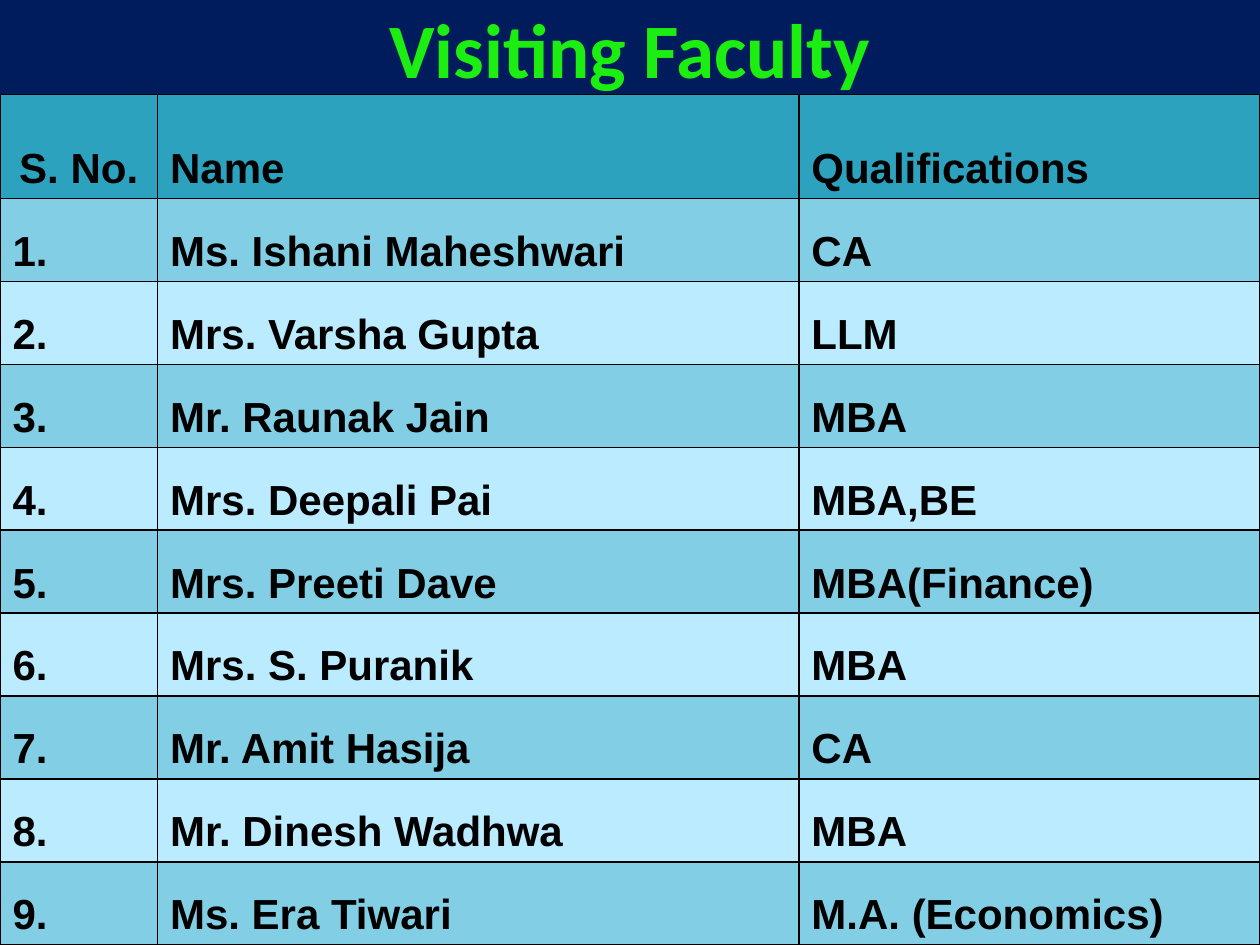
from lxml import etree
from pptx import Presentation
from pptx.dml.color import RGBColor
from pptx.enum.text import MSO_ANCHOR, PP_ALIGN
from pptx.oxml.ns import qn
from pptx.util import Pt

LEFT, CENTER = PP_ALIGN.LEFT, PP_ALIGN.CENTER
MIDDLE, BOTTOM = MSO_ANCHOR.MIDDLE, MSO_ANCHOR.BOTTOM

# Content
TITLE = "Visiting Faculty"
HEADINGS = ("S. No.", "Name", "Qualifications")
FACULTY = [
    ("Ms. Ishani Maheshwari", "CA"),
    ("Mrs. Varsha Gupta", "LLM"),
    ("Mr. Raunak Jain", "MBA"),
    ("Mrs. Deepali Pai", "MBA,BE"),
    ("Mrs. Preeti Dave", "MBA(Finance)"),
    ("Mrs. S. Puranik", "MBA"),
    ("Mr. Amit Hasija", "CA"),
    ("Mr. Dinesh Wadhwa", "MBA"),
    ("Ms. Era Tiwari", "M.A. (Economics)"),
]

# Layout and colours
WIDTH, HEIGHT, TITLE_HEIGHT = 720, 540, 54
COLUMN_WIDTHS = (90, 366.5, 263.5)
HEADING_HEIGHT = 59.4
NAVY, GREEN, BLACK = "001C5D", "1CEE12", "000000"
HEADING_FILL, ODD_FILL, EVEN_FILL = "2DA2BF", "82CEE5", "BBEBFF"


def paint(fill, color):
    fill.solid()
    fill.fore_color.rgb = RGBColor.from_string(color)


def write(frame, text, size=24, font="Arial", color=BLACK, align=LEFT):
    frame.text = text
    paragraph = frame.paragraphs[0]
    paragraph.alignment = align
    style = paragraph.runs[0].font
    style.size, style.name, style.bold = Pt(size), font, True
    style.color.rgb = RGBColor.from_string(color)


def add_borders(cell, color=BLACK, width=1):
    properties = cell._tc.get_or_add_tcPr()
    for index, side in enumerate(("lnL", "lnR", "lnT", "lnB")):
        line = etree.Element(qn(f"a:{side}"), w=str(Pt(width)))
        fill = etree.SubElement(line, qn("a:solidFill"))
        etree.SubElement(fill, qn("a:srgbClr"), val=color)
        properties.insert(index, line)


presentation = Presentation()
presentation.slide_width, presentation.slide_height = Pt(WIDTH), Pt(HEIGHT)
slide = presentation.slides.add_slide(presentation.slide_layouts[5])
paint(slide.background.fill, NAVY)

# Title
title = slide.shapes.title
title.left, title.top, title.width, title.height = Pt(0), Pt(0), Pt(WIDTH), Pt(TITLE_HEIGHT)
write(title.text_frame, TITLE, size=44, font="Calibri", color=GREEN, align=CENTER)
title.text_frame.vertical_anchor = MIDDLE

# Faculty table
rows = [HEADINGS] + [(f"{number}.", *person) for number, person in enumerate(FACULTY, 1)]
table = slide.shapes.add_table(
    len(rows), len(HEADINGS), Pt(0), Pt(TITLE_HEIGHT), Pt(WIDTH), Pt(HEIGHT - TITLE_HEIGHT)
).table
for column, width in zip(table.columns, COLUMN_WIDTHS):
    column.width = Pt(width)

person_height = (HEIGHT - TITLE_HEIGHT - HEADING_HEIGHT) / len(FACULTY)
for r, values in enumerate(rows):
    table.rows[r].height = Pt(person_height if r else HEADING_HEIGHT)
    row_fill = HEADING_FILL if r == 0 else ODD_FILL if r % 2 else EVEN_FILL
    for c, value in enumerate(values):
        cell = table.cell(r, c)
        cell.vertical_anchor = BOTTOM
        paint(cell.fill, row_fill)
        add_borders(cell)
        write(cell.text_frame, value, align=CENTER if r == c == 0 else LEFT)

presentation.save("out.pptx")
